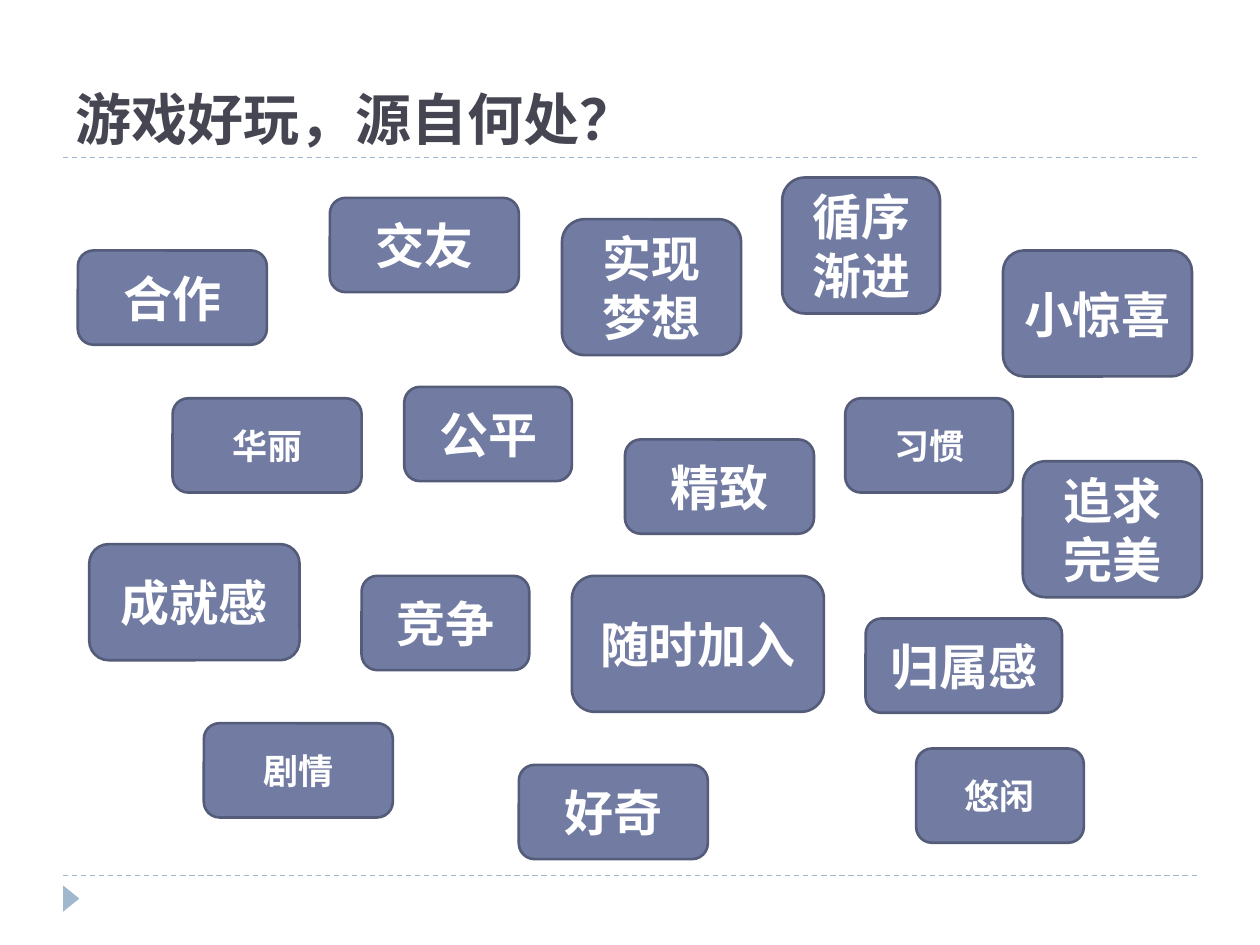
import pptx
import pptx.util
import pptx.dml.color
import pptx.enum.dml
import pptx.enum.shapes
import pptx.enum.text
import pptx.oxml

Cm, Pt = pptx.util.Cm, pptx.util.Pt
SHAPE = pptx.enum.shapes.MSO_SHAPE
ALIGN = pptx.enum.text.PP_ALIGN
ANCHOR = pptx.enum.text.MSO_ANCHOR

COLORS = {"title": "464653", "card": "727CA3", "edge": "545C79",
          "text": "FFFFFF", "accent": "9FB8CD"}

SHORT, TALL = 1.9, 2.74
CARDS = [
    ("归属感", 16.18, 9.29, 3.96, SHORT, 28),
    ("竞争", 6.02, 8.43, 3.38, SHORT, 28),
    ("随时加入", 10.26, 8.43, 5.08, TALL, 28),
    ("成就感", 0.53, 7.79, 4.24, 2.34, 28),
    ("小惊喜", 18.95, 1.87, 3.81, 2.54, 28),
    ("循序渐进", 14.5, 0.4, 3.18, TALL, 28),
    ("精致", 11.33, 5.68, 3.81, SHORT, 28),
    ("华丽", 2.21, 4.85, 3.81, SHORT, 20),
    ("悠闲", 17.2, 11.91, 3.38, SHORT, 20),
    ("公平", 6.88, 4.62, 3.38, SHORT, 28),
    ("实现梦想", 10.06, 1.24, 3.61, TALL, 28),
    ("合作", 0.3, 1.87, 3.81, SHORT, 28),
    ("习惯", 15.77, 4.85, 3.38, SHORT, 20),
    ("交友", 5.38, 0.81, 3.81, SHORT, 28),
    ("好奇", 9.19, 12.24, 3.81, SHORT, 28),
    ("剧情", 2.84, 11.4, 3.81, SHORT, 20),
    ("追求完美", 19.35, 6.12, 3.61, TALL, 28),
]


def rgb(name):
    """Return the palette colour with the given name."""
    return pptx.dml.color.RGBColor.from_string(COLORS[name])


def add_text(tf, text, font, size, color, align, anchor):
    """Write one bold run into a text frame."""
    tf.word_wrap = True
    tf.vertical_anchor = anchor
    p = tf.paragraphs[0]
    p.alignment = align
    r = p.add_run()
    r.text = text
    r.font.name = font
    r.font.size = Pt(size)
    r.font.bold = True
    r.font.color.rgb = rgb(color)


def add_rule(s, x, y, w):
    """Draw a dashed horizontal rule."""
    line = s.shapes.add_connector(pptx.enum.shapes.MSO_CONNECTOR.STRAIGHT,
                                  Cm(x), Cm(y), Cm(x + w), Cm(y))
    line.line.color.rgb = rgb("accent")
    line.line.width = Pt(0.75)
    line.line.dash_style = pptx.enum.dml.MSO_LINE.DASH
    sp_pr = line._element.spPr
    sp_pr.append(sp_pr.makeelement(pptx.oxml.ns.qn("a:effectLst"), {}))


def add_frame(s, x, y, w, h):
    """Draw the rules above and below the content box and the footer marker."""
    add_rule(s, x, y + h, w)
    add_rule(s, x, y, w)
    sp = s.shapes.add_shape(SHAPE.ISOSCELES_TRIANGLE, Cm(x - 0.1),
                            Cm(y + h + 0.3), Cm(0.53), Cm(0.33))
    sp.rotation = 90
    sp.shadow.inherit = False
    sp.fill.solid()
    sp.fill.fore_color.rgb = rgb("accent")
    sp.line.fill.background()


def add_title(s, x, y, w, h):
    """Place and fill the title placeholder."""
    sp = s.shapes.title
    sp.left, sp.top, sp.width, sp.height = Cm(x), Cm(y), Cm(w), Cm(h)
    add_text(sp.text_frame, "游戏好玩，源自何处？", "TeX Gyre Bonum", 32,
             "title", ALIGN.LEFT, ANCHOR.BOTTOM)


def add_cards(s, x, y):
    """Scatter the word cards from the top left corner of the content box."""
    for text, dx, dy, w, h, size in CARDS:
        sp = s.shapes.add_shape(SHAPE.ROUNDED_RECTANGLE, Cm(x + dx),
                                Cm(y + dy), Cm(w), Cm(h))
        sp.shadow.inherit = False
        sp.fill.solid()
        sp.fill.fore_color.rgb = rgb("card")
        sp.line.color.rgb = rgb("edge")
        sp.line.width = Pt(1.5)
        add_text(sp.text_frame, text, "Calibri", size, "text",
                 ALIGN.CENTER, ANCHOR.MIDDLE)


def main():
    """Build the slide and save it."""
    prs = pptx.Presentation()
    prs.slide_width, prs.slide_height = Cm(25.4), Cm(19.05)
    s = prs.slides.add_slide(prs.slide_layouts[5])
    left, top, width, height = 1.27, 3.18, 22.86, 14.47
    add_frame(s, left, top, width, height)
    add_title(s, left, 0.43, width, top - 0.43)
    add_cards(s, left, top)
    prs.save("out.pptx")


if __name__ == "__main__":
    main()
